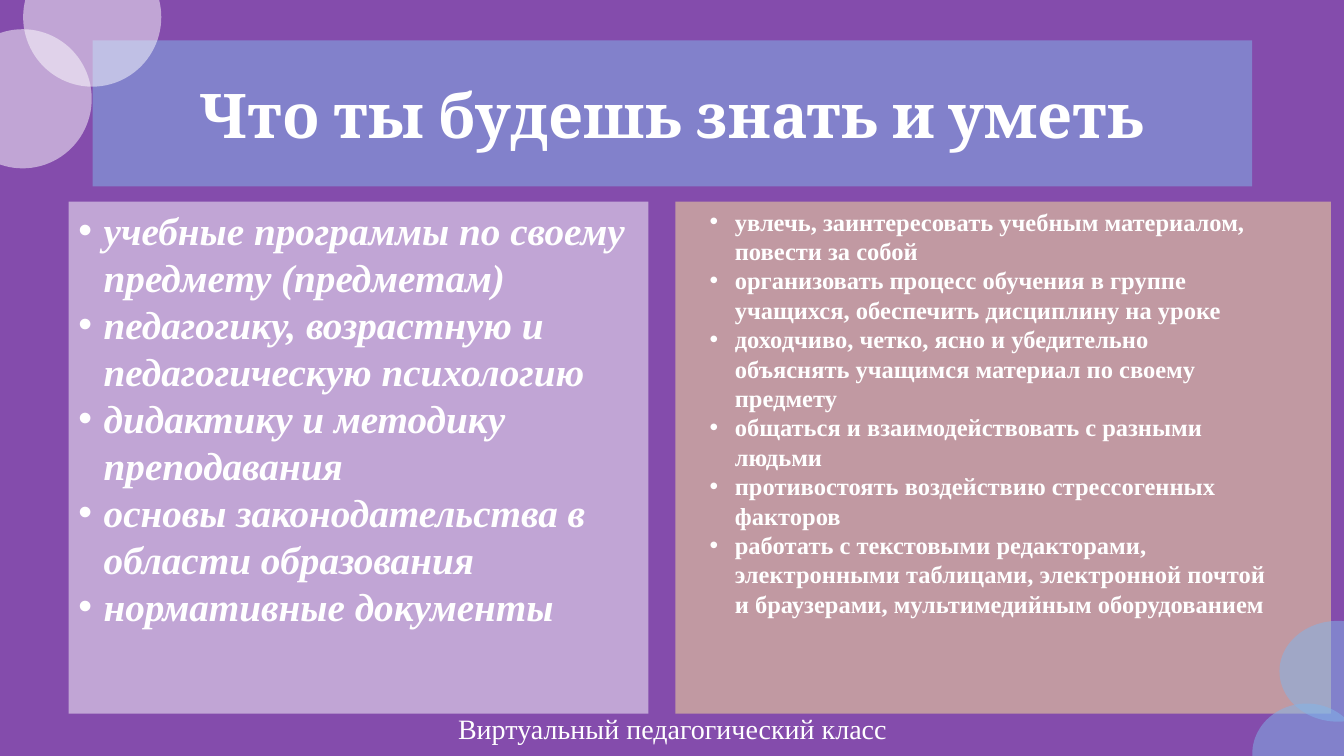
from dataclasses import dataclass

from lxml import etree
from pptx import Presentation
from pptx.dml.color import RGBColor
from pptx.enum.shapes import MSO_SHAPE
from pptx.enum.text import MSO_ANCHOR, PP_ALIGN
from pptx.oxml.ns import qn
from pptx.slide import Slide
from pptx.util import Inches, Pt

RECT, OVAL = MSO_SHAPE.RECTANGLE, MSO_SHAPE.OVAL
TOP, MIDDLE = MSO_ANCHOR.TOP, MSO_ANCHOR.MIDDLE
LEFT, CENTER = PP_ALIGN.LEFT, PP_ALIGN.CENTER

PURPLE = RGBColor(0x84, 0x4C, 0xAC)
CREAM = RGBColor(0xFF, 0xE6, 0x99)
WHITE = RGBColor(0xFF, 0xFF, 0xFF)
BLUE = RGBColor(0x81, 0xB6, 0xEB)

SERIF = "Times New Roman"
LEADING = 1.2  # line pitch of the lists, in text sizes
INDENT = Inches(0.25)

Box = tuple[float, float, float, float]


@dataclass
class Panel:
    kind: MSO_SHAPE
    box: Box
    color: RGBColor


@dataclass
class Label:
    box: Box
    lines: list[str]
    size: float
    font: str = SERIF
    bold: bool = True
    italic: bool = False
    bullet: bool = False


HEAD = (0.92, 0.4, 11.5, 1.45)

PANELS = [
    Panel(RECT, (6.7, 2, 6.5, 5.08), CREAM),
    Panel(RECT, (0.68, 2, 5.75, 5.08), WHITE),
    Panel(RECT, HEAD, BLUE),
]

BUBBLES = [
    Panel(OVAL, (12.42, 6.98, 1.08, 1), BLUE),
    Panel(OVAL, (-0.46, 0.29, 1.37, 1.38), WHITE),
    Panel(OVAL, (0.23, -0.52, 1.37, 1.38), WHITE),
    Panel(OVAL, (12.69, 6.16, 1.16, 1), BLUE),
]

TITLE = Label(HEAD, ["Что ты будешь знать и уметь"], 44, "Cambria")

KNOW = Label((0.68, 2, 5.75, 5.34), [
    "учебные программы по своему предмету (предметам)",
    "педагогику, возрастную и педагогическую психологию",
    "дидактику и методику преподавания",
    "основы законодательства в области образования",
    "нормативные документы",
], 28, italic=True, bullet=True)

SKILLS = Label((6.94, 2, 5.75, 5.34), [
    "увлечь, заинтересовать учебным материалом, повести за собой",
    "организовать процесс обучения в группе учащихся, обеспечить дисциплину на уроке",
    "доходчиво, четко, ясно и убедительно объяснять учащимся материал по своему предмету",
    "общаться и взаимодействовать с разными людьми",
    "противостоять воздействию стрессогенных факторов",
    "работать с текстовыми редакторами, электронными таблицами, "
    "электронной почтой и браузерами, мультимедийным оборудованием",
], 17.5, bullet=True)

FOOTER = Label((4.09, 7.07, 5.16, 0.31), ["Виртуальный педагогический класс"], 20, bold=False)


def draw_panel(slide: Slide, panel: Panel) -> None:
    shape = slide.shapes.add_shape(panel.kind, *map(Inches, panel.box))
    shape.shadow.inherit = False
    shape.line.fill.background()
    shape.fill.solid()
    shape.fill.fore_color.rgb = panel.color
    # Half transparent fill
    tint = shape.fill._xPr.find(qn("a:solidFill"))[0]
    etree.SubElement(tint, qn("a:alpha"), val="50000")


def draw_label(slide: Slide, label: Label) -> None:
    frame = slide.shapes.add_textbox(*map(Inches, label.box)).text_frame
    frame.word_wrap = True
    frame.vertical_anchor = TOP if label.bullet else MIDDLE
    frame.text = "\n".join(label.lines)
    for para in frame.paragraphs:
        para.alignment = LEFT if label.bullet else CENTER
        font = para.font
        font.name, font.size = label.font, Pt(label.size)
        font.bold, font.italic = label.bold, label.italic
        font.color.rgb = WHITE
        if label.bullet:
            para.line_spacing = Pt(label.size * LEADING)
            props = para._p.get_or_add_pPr()
            props.set("marL", str(INDENT))
            props.set("indent", str(-INDENT))
            mark = etree.Element(qn("a:buChar"), char="•")
            face = etree.Element(qn("a:buFont"), typeface="Arial")
            props.find(qn("a:defRPr")).addprevious(mark)
            mark.addprevious(face)


def main() -> None:
    deck = Presentation()
    deck.slide_width, deck.slide_height = Inches(13.33), Inches(7.5)
    slide = deck.slides.add_slide(deck.slide_layouts[6])
    back = slide.background.fill
    back.solid()
    back.fore_color.rgb = PURPLE

    # Panels with the heading and the first list
    for panel in PANELS:
        draw_panel(slide, panel)
    for label in (TITLE, KNOW):
        draw_label(slide, label)

    # Corner bubbles, then the second list and the footer
    for bubble in BUBBLES:
        draw_panel(slide, bubble)
    for label in (SKILLS, FOOTER):
        draw_label(slide, label)

    deck.save("out.pptx")


if __name__ == "__main__":
    main()
